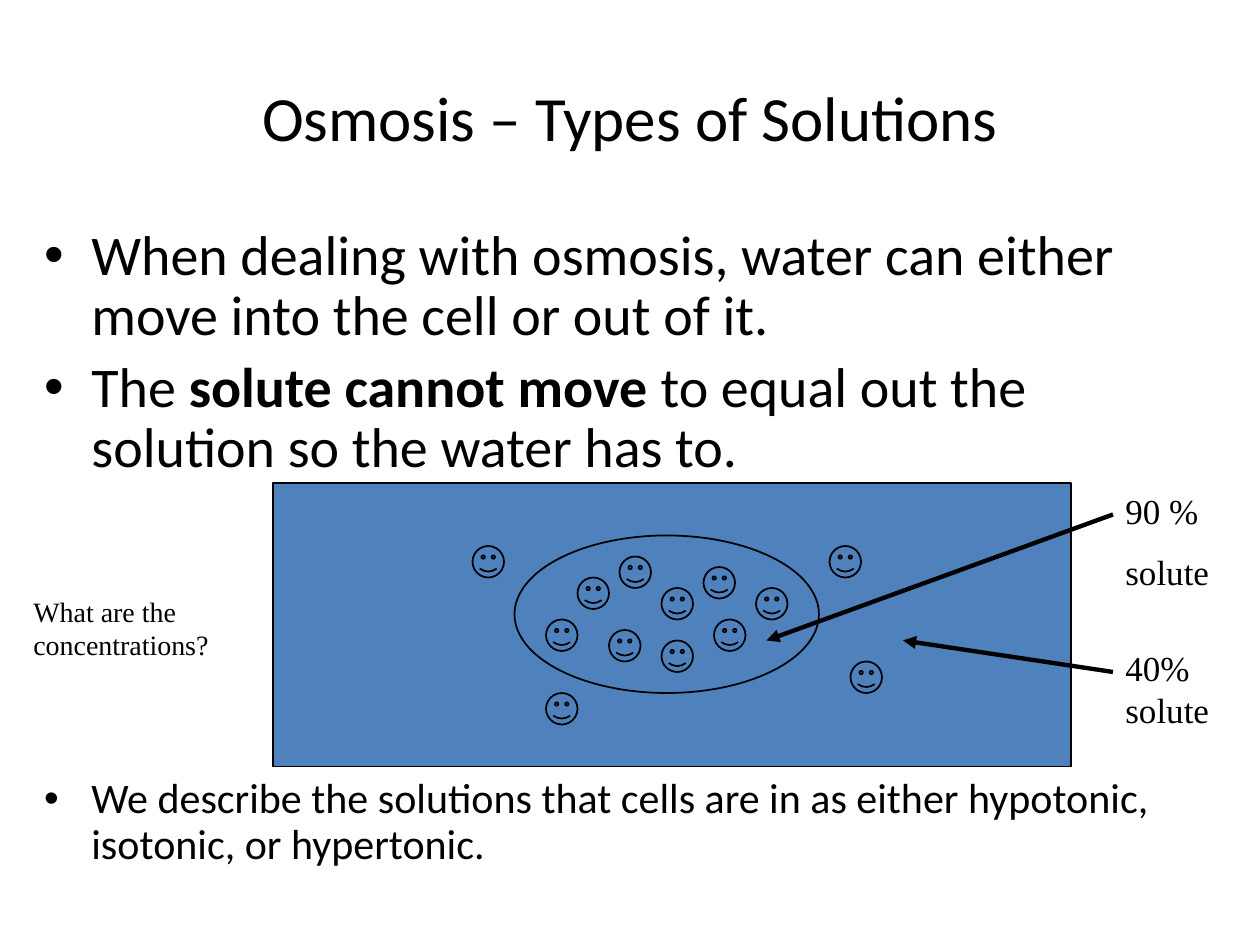
from typing import NamedTuple

from lxml import etree
from pptx import Presentation, util as u
from pptx.dml.color import RGBColor
from pptx.enum import shapes, text
from pptx.oxml.ns import qn

COLUMNS, ROWS = 120, 90  # the slide's grid, in twelfths of an inch
BLACK, WATER = "000000", "4F81BD"
SOLUTE_SIZE = 3
SOLUTES_INSIDE = [(55, 55), (59, 53), (58, 60), (63, 56), (63, 61),
                  (67, 54), (68, 59), (72, 56), (52, 59)]
SOLUTES_OUTSIDE = [(45, 52), (52, 66), (79, 52), (81, 63)]


class Area(NamedTuple):
    column: float
    row: float
    width: float
    height: float


class Label(NamedTuple):
    area: Area
    lines: list[str]
    size: int


class Arrow(NamedTuple):
    start: tuple[float, float]
    end: tuple[float, float]


LABELS = [
    Label(Area(2, 56, 21, 7.7), ["What are the concentrations?"], 16),
    Label(Area(106, 46, 18, 11.3), ["90 %", "solute"], 20),
    Label(Area(106, 61, 12, 9.2), ["40% solute"], 20),
]
ARROWS = [Arrow((106, 49), (73, 61)), Arrow((106, 64), (86, 61))]

BULLETS = [  # (spans as (words, bold), size, space before in points)
    ([("When dealing with osmosis, water can either move into the cell or out of it.", False)],
     32, 6.4),
    ([("The ", False), ("solute cannot move", True),
      (" to equal out the solution so the water has to.", False)], 32, 6.4),
    ([("We describe the solutions that cells are in as either hypotonic, "
       "isotonic, or hypertonic.", False)], 24, 170),  # clears the diagram
]

deck = Presentation()
deck.slide_width, deck.slide_height = u.Inches(10), u.Inches(7.5)
page = deck.slides.add_slide(deck.slide_layouts[1])


def color(value: str) -> RGBColor:
    return RGBColor.from_string(value)


def across(columns: float) -> int:
    return round(deck.slide_width * columns / COLUMNS)


def down(rows: float) -> int:
    return round(deck.slide_height * rows / ROWS)


def place(area: Area) -> tuple[int, int, int, int]:
    return across(area.column), down(area.row), across(area.width), down(area.height)


def move(box, area: Area) -> None:
    box.left, box.top, box.width, box.height = place(area)


def style(para, font: str, size: float) -> None:
    para.font.name, para.font.size = font, u.Pt(size)
    para.font.color.rgb = color(BLACK)


def write_title(words: str) -> None:
    box = page.shapes.title
    move(box, Area(6, 3.6, 108, 15))
    frame = box.text_frame
    frame.text = words
    frame.auto_size = text.MSO_AUTO_SIZE.NONE
    frame.vertical_anchor = text.MSO_ANCHOR.MIDDLE
    frame.paragraphs[0].alignment = text.PP_ALIGN.CENTER
    style(frame.paragraphs[0], "Calibri", 36)


def write_bullets() -> None:
    box = page.placeholders[1]
    move(box, Area(3, 21, 114, 69))
    frame = box.text_frame
    frame.auto_size = text.MSO_AUTO_SIZE.NONE
    for index, (spans, size, gap) in enumerate(BULLETS):
        para = frame.add_paragraph() if index else frame.paragraphs[0]
        para.line_spacing, para.space_before = 0.9, u.Pt(gap)
        style(para, "Calibri", size)
        for words, bold in spans:
            span = para.add_run()
            span.text = words
            if bold:
                span.font.bold = True


def draw_shape(kind: shapes.MSO_SHAPE, area: Area) -> None:
    shape = page.shapes.add_shape(kind, *place(area))
    shape.shadow.inherit = False
    shape.fill.solid()
    shape.fill.fore_color.rgb = color(WATER)
    shape.line.color.rgb = color(BLACK)
    shape.line.width = u.Pt(1)


def draw_label(label: Label) -> None:
    frame = page.shapes.add_textbox(*place(label.area)).text_frame
    frame.word_wrap = True
    frame.text = "\n".join(label.lines)
    for para in frame.paragraphs:
        para.space_before = u.Pt(label.size * 0.55)
        style(para, "Times New Roman", label.size)


def draw_arrow(arrow: Arrow) -> None:
    (x1, y1), (x2, y2) = arrow
    line = page.shapes.add_connector(shapes.MSO_CONNECTOR.STRAIGHT,
                                     across(x1), down(y1), across(x2), down(y2))
    line.line.color.rgb = color(BLACK)
    line.line.width = u.Pt(2.5)
    etree.SubElement(line.line._get_or_add_ln(), qn("a:tailEnd"), type="triangle")
    etree.SubElement(line._element.spPr, qn("a:effectLst"))


def main() -> None:
    write_title("Osmosis – Types of Solutions")
    write_bullets()
    draw_shape(shapes.MSO_SHAPE.RECTANGLE, Area(26, 46, 76, 27))
    draw_shape(shapes.MSO_SHAPE.OVAL, Area(49, 51, 29, 15))
    for column, row in SOLUTES_INSIDE + SOLUTES_OUTSIDE:
        draw_shape(shapes.MSO_SHAPE.SMILEY_FACE, Area(column, row, SOLUTE_SIZE, SOLUTE_SIZE))
    for label in LABELS:
        draw_label(label)
    for arrow in ARROWS:
        draw_arrow(arrow)
    deck.save("out.pptx")


if __name__ == "__main__":
    main()
